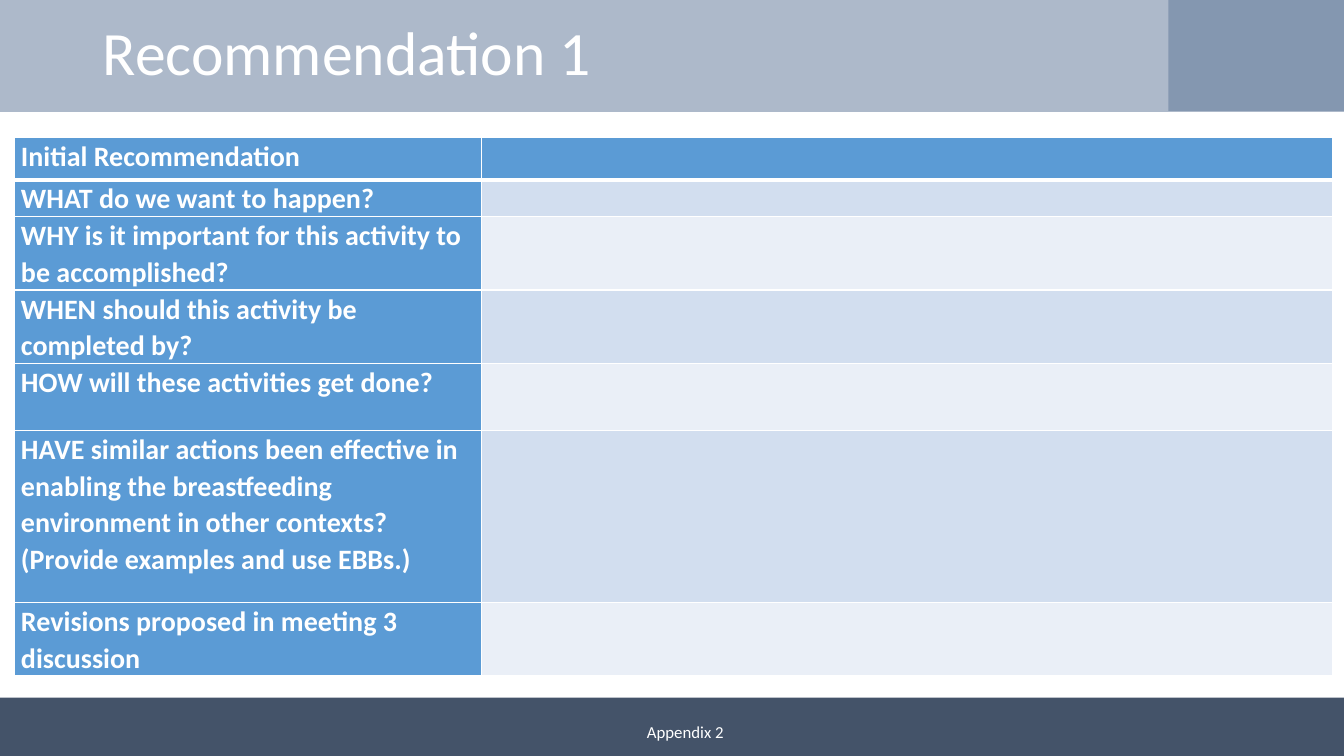
from dataclasses import dataclass

from lxml import etree
from pptx import Presentation
from pptx import util as u
from pptx.dml.color import RGBColor
from pptx.enum import shapes, text
from pptx.oxml import ns

Pt = u.Pt
WHITE, BLUE = "FFFFFF", "5B9BD5"
STRIPES = ("EAEFF7", "D2DEEF")
COLUMN_WIDTHS = (334, 608)


@dataclass
class Band:
    left: float
    top: float
    width: float
    height: float
    color: str


@dataclass
class Question:
    label: str
    height: float


BANDS = (
    Band(0, 0, 960, 80, "ADB9CA"),
    Band(0, 498.3, 960, 41.7, "445369"),
    Band(834.5, 0, 125.5, 79.3, "8497B0"),
)
QUESTIONS = (
    Question("Initial Recommendation", 30.5),
    Question("WHAT do we want to happen?", 24),
    Question("WHY is it important for this activity to be accomplished?", 48),
    Question("WHEN should this activity be completed by?", 48),
    Question("HOW will these activities get done?", 48),
    Question("HAVE similar actions been effective in enabling the breastfeeding "
             "environment in other contexts? (Provide examples and use EBBs.)", 123),
    Question("Revisions proposed in meeting 3 discussion", 48),
)


def paint(fill, color: str) -> None:
    fill.solid()
    fill.fore_color.rgb = RGBColor.from_string(color)


def style_font(p, size: float, bold: bool = False) -> None:
    p.font.name = "Calibri"
    p.font.size = Pt(size)
    p.font.bold = bold
    paint(p.font.fill, WHITE)


def place(sp, left: float, top: float, width: float, height: float) -> None:
    sp.left, sp.top, sp.width, sp.height = map(Pt, (left, top, width, height))


def add_band(s, band: Band) -> None:
    sp = s.shapes.add_shape(shapes.MSO_SHAPE.RECTANGLE, Pt(band.left), Pt(band.top),
                            Pt(band.width), Pt(band.height))
    sp.shadow.inherit = False
    paint(sp.fill, band.color)
    sp.line.fill.background()


def add_borders(cell, top: float, bottom: float) -> None:
    """Draw white cell borders, with the given top and bottom widths."""
    tc_pr = cell._tc.get_or_add_tcPr()
    for side, width in (("L", 1), ("R", 1), ("T", top), ("B", bottom)):
        ln = etree.SubElement(tc_pr, ns.qn(f"a:ln{side}"), w=str(Pt(width)))
        fill = etree.SubElement(ln, ns.qn("a:solidFill"))
        etree.SubElement(fill, ns.qn("a:srgbClr"), val=WHITE)


def add_question_table(s) -> None:
    frame = s.shapes.add_table(len(QUESTIONS), len(COLUMN_WIDTHS), Pt(10), Pt(98),
                               Pt(sum(COLUMN_WIDTHS)),
                               Pt(sum(q.height for q in QUESTIONS)))
    table = frame.table
    for column, width in zip(table.columns, COLUMN_WIDTHS):
        column.width = Pt(width)
    for i, question in enumerate(QUESTIONS):
        table.rows[i].height = Pt(question.height)
        for cell in table.rows[i].cells:
            cell.margin_left = cell.margin_right = Pt(5)
            cell.margin_top = cell.margin_bottom = 0
            add_borders(cell, top=3 if i == 1 else 1, bottom=3 if i == 0 else 1)
        label, answer = table.rows[i].cells
        paint(label.fill, BLUE)
        paint(answer.fill, STRIPES[i % 2] if i else BLUE)
        p = label.text_frame.paragraphs[0]
        p.text = question.label
        p.line_spacing = 1.07
        style_font(p, 20, bold=True)


def add_title(s) -> None:
    title = s.shapes.title
    title._element.getparent().append(title._element)  # in front of the bands
    place(title, 66.2, 10.8, 751, 57.6)
    tf = title.text_frame
    tf.vertical_anchor = text.MSO_ANCHOR.MIDDLE
    p = tf.paragraphs[0]
    p.text = "Recommendation 1"
    p.alignment = text.PP_ALIGN.LEFT
    p.line_spacing = Pt(46)
    style_font(p, 44)


def add_footer(s) -> None:
    sp = s.shapes.add_textbox(Pt(172), Pt(508.3), Pt(635), Pt(28.8))
    tf = sp.text_frame
    tf.word_wrap = True
    tf.vertical_anchor = text.MSO_ANCHOR.MIDDLE
    p = tf.paragraphs[0]
    p.text = "Appendix 2"
    p.alignment = text.PP_ALIGN.CENTER
    style_font(p, 12)


def main() -> None:
    prs = Presentation()
    prs.slide_width, prs.slide_height = Pt(960), Pt(540)
    s = prs.slides.add_slide(prs.slide_layouts[5])
    for band in BANDS:
        add_band(s, band)
    add_title(s)
    add_question_table(s)
    add_footer(s)
    prs.save("out.pptx")


if __name__ == "__main__":
    main()
